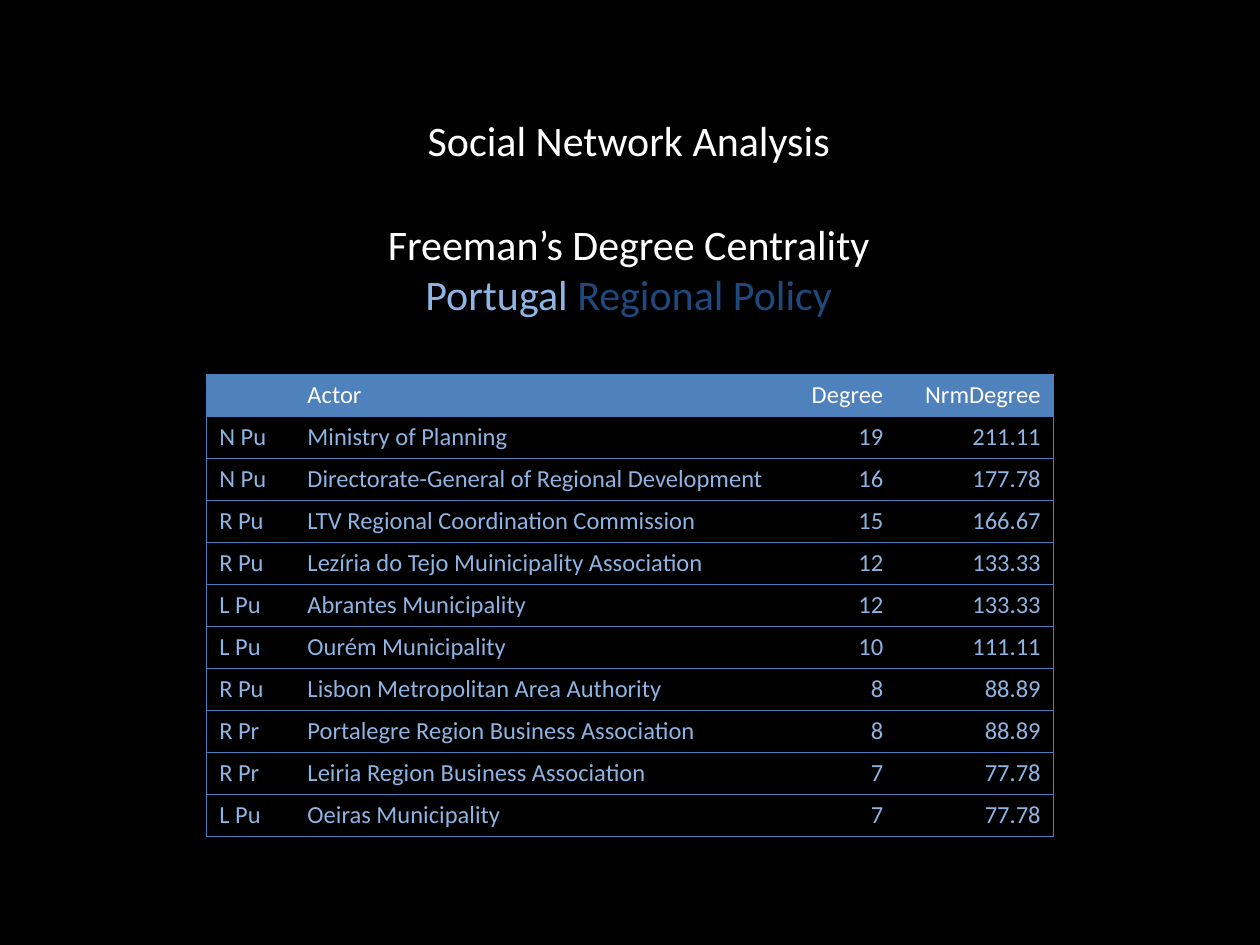
from typing import NamedTuple

from lxml.etree import SubElement
from pptx import Presentation
from pptx.dml.color import RGBColor
from pptx.enum.text import MSO_ANCHOR, PP_ALIGN
from pptx.oxml.ns import qn
from pptx.util import Inches, Pt

WHITE, PALE, NAVY = "FFFFFF", "8EB4E3", "1F497D"
HEAD, RULE = "4F81BD", "4B7EBC"
LEFT, TOP, WIDE = 0.39, 0.86, 9.2


class Actor(NamedTuple):
    code: str
    name: str
    degree: str
    norm: str


TITLES = Actor("", "Actor", "Degree", "NrmDegree")
ACTORS = [
    Actor("N Pu", "Ministry of Planning", "19", "211.11"),
    Actor("N Pu", "Directorate-General of Regional Development", "16", "177.78"),
    Actor("R Pu", "LTV Regional Coordination Commission", "15", "166.67"),
    Actor("R Pu", "Lezíria do Tejo Muinicipality Association", "12", "133.33"),
    Actor("L Pu", "Abrantes Municipality", "12", "133.33"),
    Actor("L Pu", "Ourém Municipality", "10", "111.11"),
    Actor("R Pu", "Lisbon Metropolitan Area Authority", "8", "88.89"),
    Actor("R Pr", "Portalegre Region Business Association", "8", "88.89"),
    Actor("R Pr", "Leiria Region Business Association", "7", "77.78"),
    Actor("L Pu", "Oeiras Municipality", "7", "77.78"),
]
WIDTHS = [0.7, 3.91, 0.86, 1.25]
ALIGNS = [PP_ALIGN.LEFT, PP_ALIGN.LEFT, PP_ALIGN.RIGHT, PP_ALIGN.RIGHT]
HEIGHT = 3.67


def paint(target, tint: str) -> None:
    target.solid()
    target.fore_color.rgb = RGBColor.from_string(tint)


def write(para, text: str, *, size: float = 24, tint: str = WHITE,
          align=PP_ALIGN.CENTER) -> None:
    para.alignment = align
    run = para.add_run()
    run.text = text
    run.font.name = "Calibri"
    run.font.size = Pt(size)
    paint(run.font.fill, tint)


def border(cell, sides: str) -> None:
    props = cell._tc.get_or_add_tcPr()
    for side in "LRTB":
        line = SubElement(props, qn(f"a:ln{side}"), w=str(Pt(0.75)))
        if side in sides:
            fill = SubElement(line, qn("a:solidFill"))
            SubElement(fill, qn("a:srgbClr"), val=RULE)
        else:
            SubElement(line, qn("a:noFill"))


def draw_title(slide) -> None:
    title = slide.shapes.title
    title.left, title.top = Inches(LEFT), Inches(TOP)
    title.width, title.height = Inches(WIDE), Inches(0.5)
    title.text_frame.vertical_anchor = MSO_ANCHOR.TOP
    write(title.text_frame.paragraphs[0], "Social Network Analysis")


def draw_topic(slide) -> None:
    box = slide.shapes.add_textbox(Inches(LEFT), Inches(TOP), Inches(WIDE), Inches(1.72))
    frame = box.text_frame
    frame.word_wrap = True
    frame.vertical_anchor = MSO_ANCHOR.BOTTOM
    para = frame.paragraphs[0]
    write(para, "Freeman’s Degree Centrality")
    para.add_line_break()
    write(para, "Portugal ", tint=PALE)
    write(para, "Regional Policy", tint=NAVY)


def draw_table(slide, rows: list[Actor]) -> None:
    table = slide.shapes.add_table(
        len(rows), len(WIDTHS), Inches(1.64), Inches(2.97),
        Inches(sum(WIDTHS)), Inches(HEIGHT)).table
    table.first_row = table.horz_banding = False
    for col, width in zip(table.columns, WIDTHS):
        col.width = Inches(width)
    last = len(WIDTHS) - 1
    for r, row in enumerate(rows):
        table.rows[r].height = Inches(HEIGHT / len(rows))
        for c, text in enumerate(row):
            cell = table.cell(r, c)
            cell.margin_top = cell.margin_bottom = 0
            cell.vertical_anchor = MSO_ANCHOR.MIDDLE
            border(cell, "TB" + "L" * (c == 0) + "R" * (c == last))
            if r == 0:
                paint(cell.fill, HEAD)
            else:
                cell.fill.background()
            if text:
                write(cell.text_frame.paragraphs[0], text, size=14,
                      tint=PALE if r else WHITE, align=ALIGNS[c])


def main() -> None:
    deck = Presentation()
    deck.slide_width, deck.slide_height = Inches(10), Inches(7.5)
    slide = deck.slides.add_slide(deck.slide_layouts[5])
    paint(slide.background.fill, "000000")
    draw_topic(slide)
    draw_title(slide)
    draw_table(slide, [TITLES, *ACTORS])
    deck.save("out.pptx")


if __name__ == "__main__":
    main()
